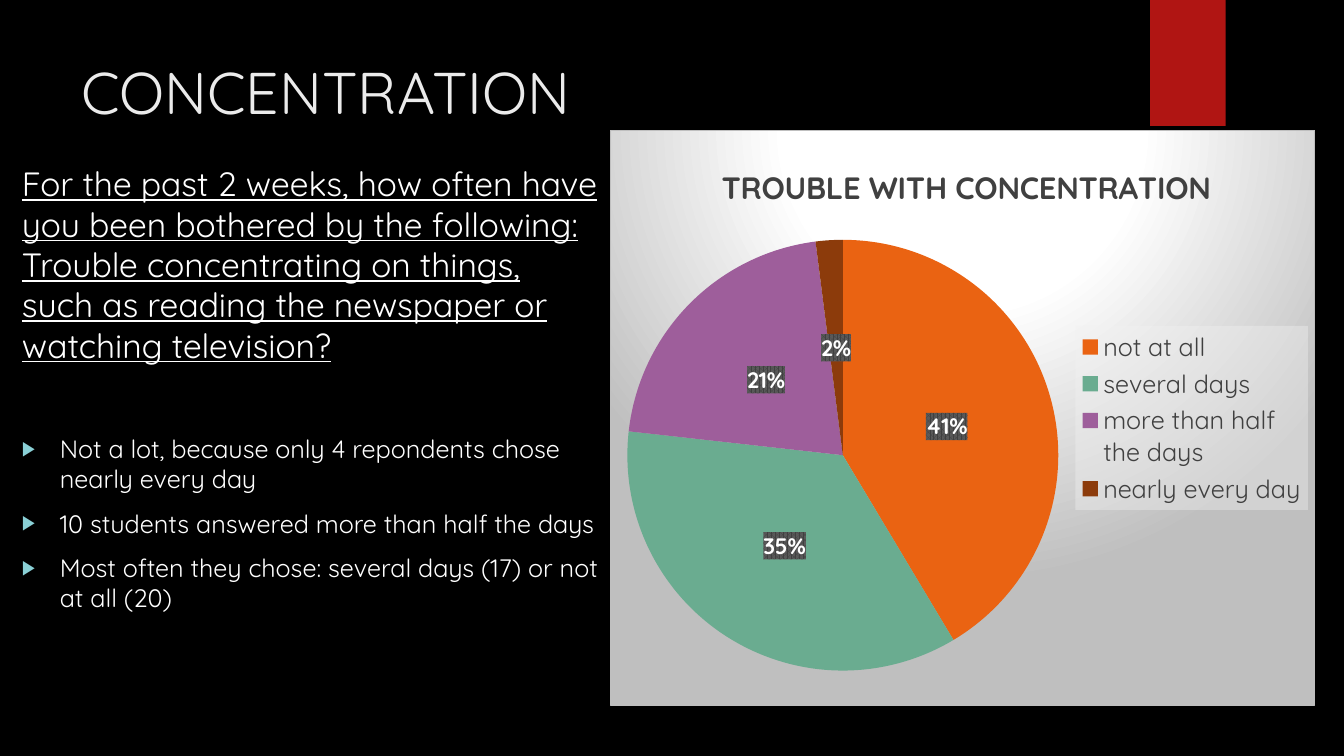
"""Build the slide on trouble with concentration, with its findings and pie chart."""
from dataclasses import dataclass

import lxml.etree
import pptx
import pptx.chart.chart
import pptx.chart.data
import pptx.dml.color
import pptx.enum.chart
import pptx.enum.shapes
import pptx.oxml
import pptx.oxml.ns
import pptx.slide
import pptx.text.text
import pptx.util

FONT = "Quicksand"
CHART_TITLE = "TROUBLE WITH CONCENTRATION"
BULLET_INDENT = 27
NAMESPACES = pptx.oxml.ns.nsdecls("a", "c")


@dataclass(frozen=True)
class Line:
    text: str
    size: float
    color: str = "FFFFFF"
    space_before: float = 0
    underline: bool = False
    bullet: bool = False


@dataclass(frozen=True)
class TextBlock:
    left: float
    top: float
    width: float
    height: float
    lines: tuple[Line, ...]


@dataclass(frozen=True)
class Answer:
    name: str
    percent: int
    color: str


TEXT_BLOCKS = (
    TextBlock(51, 36, 741, 110, (Line("CONCENTRATION", 42, "EBEBEB"),)),
    TextBlock(8.64, 113, 427, 411, (
        Line("For the past 2 weeks, how often have you been bothered by the following: "
             "Trouble concentrating on things, such as reading the newspaper or "
             "watching television?", 24, underline=True),
        Line("Not a lot, because only 4 repondents chose nearly every day", 18,
             space_before=49, bullet=True),
        Line("10 students answered more than half the days", 18,
             space_before=10, bullet=True),
        Line("Most often they chose: several days (17) or not at all (20)", 18,
             space_before=10, bullet=True),
    )),
)

ANSWERS = (
    Answer("not at all", 41, "EA6312"),
    Answer("several days", 35, "6AAC90"),
    Answer("more than half the days", 21, "9E5E9B"),
    Answer("nearly every day", 2, "8C3B0B"),
)

CHART_FILL = """<a:gradFill><a:gsLst>
<a:gs pos="0"><a:srgbClr val="FFFFFF"/></a:gs>
<a:gs pos="39000"><a:srgbClr val="FFFFFF"/></a:gs>
<a:gs pos="100000"><a:srgbClr val="BFBFBF"/></a:gs></a:gsLst>
<a:path path="circle"><a:fillToRect l="50000" t="-80000" r="50000" b="180000"/></a:path>
</a:gradFill><a:ln w="9525"><a:solidFill><a:srgbClr val="BFBFBF"/></a:solidFill></a:ln>"""
LEGEND_FILL = """<a:solidFill><a:srgbClr val="F2F2F2"><a:alpha val="39000"/></a:srgbClr>
</a:solidFill><a:ln><a:noFill/></a:ln>"""
LABEL_FILL = """<a:pattFill prst="pct75"><a:fgClr><a:srgbClr val="404040"/></a:fgClr>
<a:bgClr><a:srgbClr val="595959"/></a:bgClr></a:pattFill><a:ln><a:noFill/></a:ln>"""


def rgb(value: str) -> pptx.dml.color.RGBColor:
    """Turn a hex string into a colour."""
    return pptx.dml.color.RGBColor.from_string(value)


def set_font(font: pptx.text.text.Font, size: float, color: str, bold: bool = False) -> None:
    """Apply the slide's typeface with a size, colour and weight."""
    font.name = FONT
    font.size = pptx.util.Pt(size)
    font.bold = bold
    font.color.rgb = rgb(color)


def add_bullet(paragraph: pptx.text.text._Paragraph) -> None:
    """Give a paragraph a hanging triangle bullet."""
    properties = paragraph._p.get_or_add_pPr()
    indent = pptx.util.Pt(BULLET_INDENT)
    properties.set("marL", str(indent))
    properties.set("indent", str(-indent))
    color = lxml.etree.SubElement(properties, pptx.oxml.ns.qn("a:buClr"))
    lxml.etree.SubElement(color, pptx.oxml.ns.qn("a:srgbClr"), val="8AD0D6")
    lxml.etree.SubElement(properties, pptx.oxml.ns.qn("a:buSzPct"), val="80000")
    lxml.etree.SubElement(properties, pptx.oxml.ns.qn("a:buFont"), typeface="Arial")
    lxml.etree.SubElement(properties, pptx.oxml.ns.qn("a:buChar"), char="▶")


def add_text(page: pptx.slide.Slide, block: TextBlock) -> None:
    """Draw one text block."""
    edges = (block.left, block.top, block.width, block.height)
    frame = page.shapes.add_textbox(*map(pptx.util.Pt, edges)).text_frame
    frame.word_wrap = True
    for index, line in enumerate(block.lines):
        paragraph = frame.add_paragraph() if index else frame.paragraphs[0]
        paragraph.text = line.text
        paragraph.space_before = pptx.util.Pt(line.space_before)
        if line.bullet:
            add_bullet(paragraph)
        set_font(paragraph.font, line.size, line.color)
        paragraph.font.underline = line.underline


def add_ribbon(page: pptx.slide.Slide) -> None:
    """Draw the red tab at the top edge."""
    ribbon = page.shapes.add_shape(
        pptx.enum.shapes.MSO_SHAPE.RECTANGLE,
        *map(pptx.util.Pt, (821.5, 0, 54, 90)))
    ribbon.shadow.inherit = False
    ribbon.fill.solid()
    ribbon.fill.fore_color.rgb = rgb("B01513")
    ribbon.line.fill.background()


def make_style(content: str) -> lxml.etree._Element:
    """Wrap fill and line markup as chart shape properties."""
    return pptx.oxml.parse_xml(f"<c:spPr {NAMESPACES}>{content}</c:spPr>")


def place(part: lxml.etree._Element, position: int, inner: bool = False,
          **fractions: float) -> None:
    """Fix a chart part at fractions of the chart area."""
    for old in part.findall(pptx.oxml.ns.qn("c:layout")):
        part.remove(old)
    target = '<c:layoutTarget val="inner"/>' if inner else ""
    modes = '<c:xMode val="edge"/><c:yMode val="edge"/>'
    values = "".join(f'<c:{name} val="{value}"/>' for name, value in fractions.items())
    part.insert(position, pptx.oxml.parse_xml(
        f"<c:layout {NAMESPACES}><c:manualLayout>{target}{modes}{values}"
        "</c:manualLayout></c:layout>"))


def style_chart_parts(chart: pptx.chart.chart.Chart) -> None:
    """Place the chart parts and fill the backgrounds."""
    body = chart.element.find(pptx.oxml.ns.qn("c:chart"))
    title, plot_area, legend = (
        body.find(pptx.oxml.ns.qn(name)) for name in ("c:title", "c:plotArea", "c:legend"))
    place(title, 1, x=0.15, y=0.05)
    place(plot_area, 0, inner=True, x=0.02, y=0.19, w=0.62, h=0.75)
    place(legend, 1, x=0.66, y=0.34, w=0.33, h=0.32)
    body.addnext(make_style(CHART_FILL))
    legend.find(pptx.oxml.ns.qn("c:txPr")).addprevious(make_style(LEGEND_FILL))
    labels = next(plot_area.iter(pptx.oxml.ns.qn("c:dLbls")))
    labels.find(pptx.oxml.ns.qn("c:txPr")).addprevious(make_style(LABEL_FILL))


def add_pie(page: pptx.slide.Slide) -> None:
    """Draw the pie chart of answers."""
    data = pptx.chart.data.CategoryChartData()
    data.categories = [answer.name for answer in ANSWERS]
    data.add_series(CHART_TITLE, [answer.percent for answer in ANSWERS])
    chart = page.shapes.add_chart(
        pptx.enum.chart.XL_CHART_TYPE.PIE,
        *map(pptx.util.Pt, (435.6, 93, 504, 411)), data).chart
    set_font(chart.font, 10, "FFFFFF")
    chart.has_title = True
    heading = chart.chart_title.text_frame
    heading.text = CHART_TITLE
    set_font(heading.paragraphs[0].font, 22, "404040", bold=True)
    chart.has_legend = True
    chart.legend.position = pptx.enum.chart.XL_LEGEND_POSITION.RIGHT
    chart.legend.include_in_layout = False
    set_font(chart.legend.font, 18, "404040")
    chart.plots[0].vary_by_categories = True
    series = chart.plots[0].series[0]
    for index, answer in enumerate(ANSWERS):
        fill = series.points[index].format.fill
        fill.solid()
        fill.fore_color.rgb = rgb(answer.color)
    labels = series.data_labels
    labels.show_value = False
    labels.show_percentage = True
    labels.number_format = "0%"
    labels.number_format_is_linked = False
    labels.position = pptx.enum.chart.XL_LABEL_POSITION.CENTER
    set_font(labels.font, 16, "FFFFFF", bold=True)
    style_chart_parts(chart)


def main() -> None:
    """Build and save the deck."""
    deck = pptx.Presentation()
    deck.slide_width, deck.slide_height = pptx.util.Pt(960), pptx.util.Pt(540)
    page = deck.slides.add_slide(deck.slide_layouts[6])
    page.background.fill.solid()
    page.background.fill.fore_color.rgb = rgb("000000")
    add_ribbon(page)
    for block in TEXT_BLOCKS:
        add_text(page, block)
    add_pie(page)
    deck.save("out.pptx")


if __name__ == "__main__":
    main()
